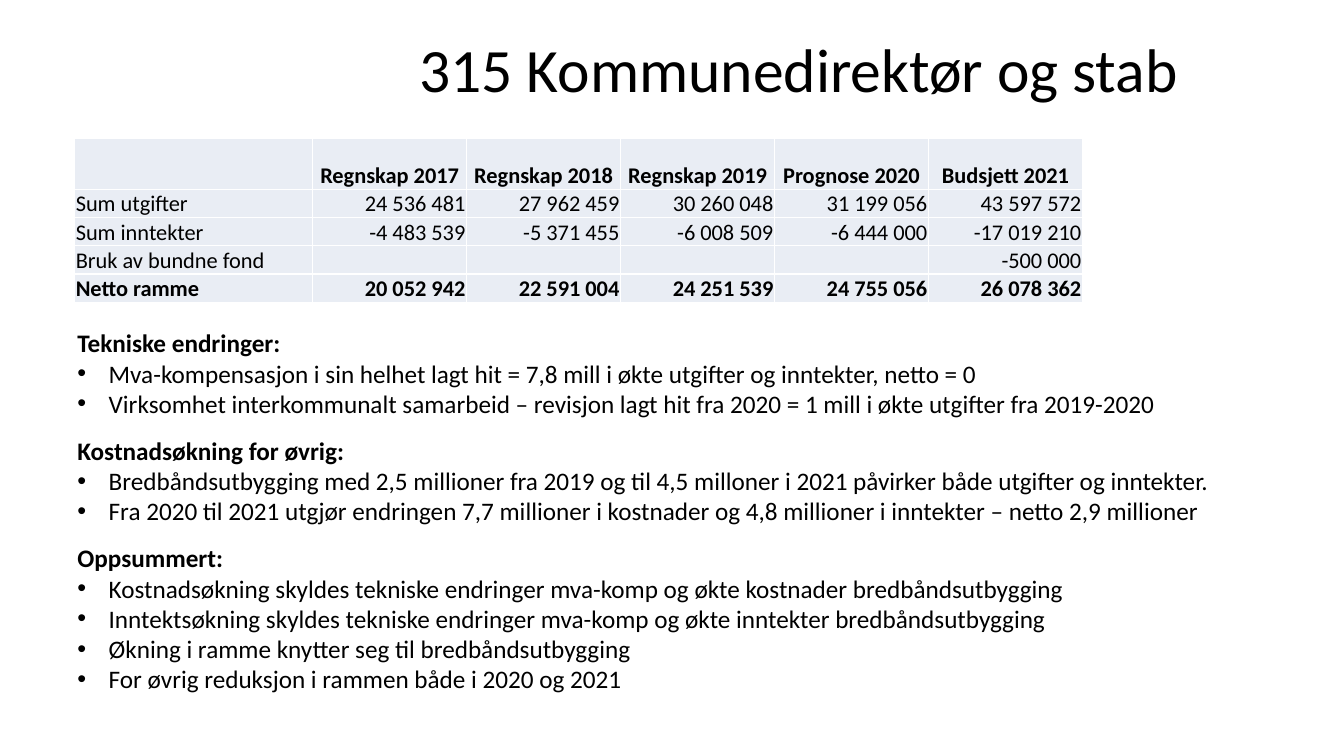
from dataclasses import dataclass

from lxml.etree import SubElement
from pptx import Presentation
from pptx.dml.color import RGBColor
from pptx.enum.text import MSO_ANCHOR as Anchor, MSO_AUTO_SIZE as AutoSize, PP_ALIGN as Align
from pptx.oxml.ns import qn
from pptx.util import Cm, Pt


@dataclass(frozen=True)
class Theme:
    """Colours, font and type sizes of the slide."""
    font: str = "Calibri"
    ink: str = "000000"
    cell: str = "E9EDF4"
    border: str = "FFFFFF"
    title: int = 44
    table: int = 16
    body: int = 18
    gap: int = 12


THEME = Theme()

HEADER = ["", "Regnskap 2017", "Regnskap 2018", "Regnskap 2019", "Prognose 2020", "Budsjett 2021"]
BUDGET = [
    HEADER,
    ["Sum utgifter", "24 536 481", "27 962 459", "30 260 048", "31 199 056", "43 597 572"],
    ["Sum inntekter", "-4 483 539", "-5 371 455", "-6 008 509", "-6 444 000", "-17 019 210"],
    ["Bruk av bundne fond", "", "", "", "", "-500 000"],
    ["Netto ramme", "20 052 942", "22 591 004", "24 251 539", "24 755 056", "26 078 362"],
]
NOTES = {
    "Tekniske endringer:": [
        "Mva-kompensasjon i sin helhet lagt hit = 7,8 mill i økte utgifter og inntekter, netto = 0",
        "Virksomhet interkommunalt samarbeid – revisjon lagt hit fra 2020 = 1 mill i økte utgifter fra 2019-2020",
    ],
    "Kostnadsøkning for øvrig:": [
        "Bredbåndsutbygging med 2,5 millioner fra 2019 og til 4,5 milloner i 2021 påvirker både utgifter og inntekter.",
        "Fra 2020 til 2021 utgjør endringen 7,7 millioner i kostnader og 4,8 millioner i inntekter – netto 2,9 millioner",
    ],
    "Oppsummert:": [
        "Kostnadsøkning skyldes tekniske endringer mva-komp og økte kostnader bredbåndsutbygging",
        "Inntektsøkning skyldes tekniske endringer mva-komp og økte inntekter bredbåndsutbygging",
        "Økning i ramme knytter seg til bredbåndsutbygging",
        "For øvrig reduksjon i rammen både i 2020 og 2021",
    ],
}


def write(p, text, size, bold=False, align=Align.LEFT, before=0, bullet=False):
    """Fill a paragraph with formatted text."""
    p.alignment = align
    p.space_before = Pt(before)
    if bullet:
        pPr = p._p.get_or_add_pPr()
        pPr.set("marL", str(Cm(0.79)))
        pPr.set("indent", str(-Cm(0.79)))
        SubElement(pPr, qn("a:buFont"), typeface="Arial")
        SubElement(pPr, qn("a:buChar"), char="•")
    if not text:
        SubElement(p._p, qn("a:endParaRPr"), sz=str(size * 100))
        return
    r = p.add_run()
    r.text = text
    r.font.name = THEME.font
    r.font.size = Pt(size)
    r.font.bold = bold
    r.font.color.rgb = RGBColor.from_string(THEME.ink)


def add_box(s, box, anchor=Anchor.TOP):
    """Add a wrapping text box and return its text frame."""
    tf = s.shapes.add_textbox(*box).text_frame
    tf.word_wrap = True
    tf.vertical_anchor = anchor
    return tf


def add_title(s, box, text):
    """Add the centred slide title."""
    tf = add_box(s, box, Anchor.MIDDLE)
    write(tf.paragraphs[0], text, THEME.title, align=Align.CENTER)


def style_cell(cell):
    """Give a cell its borders, fill, insets and anchor."""
    tcPr = cell._tc.get_or_add_tcPr()
    for side in ("lnL", "lnR", "lnT", "lnB"):
        ln = SubElement(tcPr, qn(f"a:{side}"), w=str(Pt(1)))
        fill = SubElement(ln, qn("a:solidFill"))
        SubElement(fill, qn("a:srgbClr"), val=THEME.border)
    cell.fill.solid()
    cell.fill.fore_color.rgb = RGBColor.from_string(THEME.cell)
    cell.margin_left = cell.margin_right = cell.margin_top = Cm(0.03)
    cell.margin_bottom = 0
    cell.vertical_anchor = Anchor.BOTTOM


def add_budget(s, box, rows):
    """Add the budget table with a wide label column and a tall header row."""
    left, top, width, height = box
    label_width, header_height = Cm(6), Cm(1.27)
    table = s.shapes.add_table(len(rows), len(rows[0]), left, top, width, height).table
    table.first_row = table.horz_banding = False
    for j, col in enumerate(table.columns):
        col.width = label_width if j == 0 else (width - label_width) // (len(rows[0]) - 1)
    for i, row in enumerate(table.rows):
        row.height = header_height if i == 0 else (height - header_height) // (len(rows) - 1)
        for j, text in enumerate(rows[i]):
            cell = table.cell(i, j)
            style_cell(cell)
            align = Align.LEFT if j == 0 else Align.CENTER if i == 0 else Align.RIGHT
            write(cell.text_frame.paragraphs[0], text, THEME.table,
                  bold=i in (0, len(rows) - 1), align=align)


def add_notes(s, box, sections):
    """Add bold headings, each followed by its bullets."""
    tf = add_box(s, box)
    tf.auto_size = AutoSize.SHAPE_TO_FIT_TEXT
    p = tf.paragraphs[0]
    for n, (heading, bullets) in enumerate(sections.items()):
        if n:
            p = tf.add_paragraph()
        write(p, heading, THEME.body, bold=True, before=THEME.gap if n else 0)
        for text in bullets:
            write(tf.add_paragraph(), text, THEME.body, bullet=True)


def main():
    """Build and save the slide."""
    prs = Presentation()
    prs.slide_width, prs.slide_height = Cm(33.87), Cm(19.05)
    s = prs.slides.add_slide(prs.slide_layouts[6])
    add_title(s, (Cm(4.9), Cm(0.13), Cm(30.48), Cm(3.17)), "315 Kommunedirektør og stab")
    add_budget(s, (Cm(1.88), Cm(3.5), Cm(25.4), Cm(4.12)), BUDGET)
    add_notes(s, (Cm(1.7), Cm(8.13), Cm(30.48), Cm(9.58)), NOTES)
    prs.save("out.pptx")


if __name__ == "__main__":
    main()
